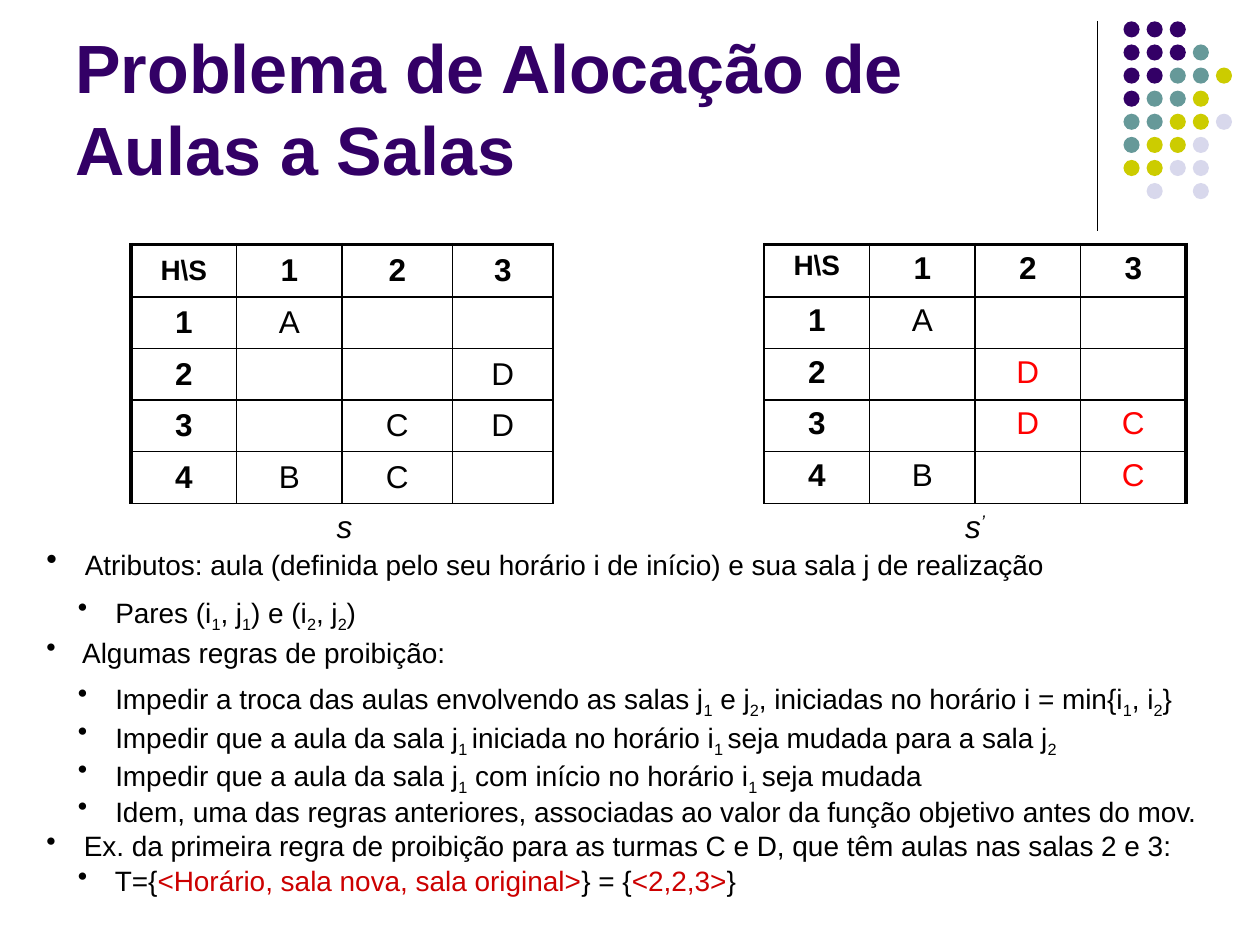
from lxml.etree import SubElement
from pptx import Presentation
from pptx.dml.color import RGBColor
from pptx.enum.shapes import MSO_CONNECTOR as Line, MSO_SHAPE as Shape
from pptx.enum.text import MSO_ANCHOR as Anchor, PP_ALIGN as Align
from pptx.oxml.ns import qn
from pptx.util import Pt

BLACK = RGBColor(0x00, 0x00, 0x00)
PURPLE = RGBColor(0x33, 0x00, 0x66)
TEAL = RGBColor(0x66, 0x99, 0x99)
OLIVE = RGBColor(0xCC, 0xCC, 0x00)
LILAC = RGBColor(0xD8, 0xD8, 0xEC)
RED = RGBColor(0xFF, 0x00, 0x00)
DARK_RED = RGBColor(0xCC, 0x00, 0x00)

DOT_COLORS = {"P": PURPLE, "T": TEAL, "O": OLIVE, "L": LILAC}
DOT_ROWS = ["PPP", "PPPT", "PPTTO", "PTTO", "TTOOL", "TOOL", "OOLL", " L L"]
BEFORE = [["A", "", ""], ["", "", "D"], ["", "C", "D"], ["B", "C", ""]]
AFTER = [["A", "", ""], ["", "D", ""], ["", "D", "C"], ["B", "", "C"]]
COLUMNS = [60.3, 60.3, 63.2, 57.4] + [60.3] * 6
ROWS = [30] + [29.5] * 5
GAP_COLUMNS = (4, 5)
CAPTION_ROW = 5
EDGES = {"L": (0, -1), "R": (0, 1), "T": (-1, 0), "B": (1, 0)}


def baseline(r, percent):
    r._r.get_or_add_rPr().set("baseline", str(percent * 1000))


def subscript(r):
    baseline(r, -25)


def dark_red(r):
    r.font.color.rgb = DARK_RED


def in_grid(row, col):
    return 0 <= row < CAPTION_ROW and 0 <= col < len(COLUMNS) and col not in GAP_COLUMNS


class Deck:
    font = "Arial"

    def __init__(self, prs):
        self.s = prs.slides.add_slide(prs.slide_layouts[6])

    def style(self, p, size, color=BLACK, bold=False, italic=False):
        f = p.font
        f.name, f.size, f.bold, f.italic = self.font, Pt(size), bold, italic
        f.color.rgb = color

    def line(self, x1, y1, x2, y2):
        sp = self.s.shapes.add_connector(Line.STRAIGHT, Pt(x1), Pt(y1), Pt(x2), Pt(y2))
        sp.line.color.rgb = BLACK
        sp.line.width = Pt(0.75)
        SubElement(sp._element.spPr, qn("a:effectLst"))

    def dot(self, x, y, d, color):
        sp = self.s.shapes.add_shape(Shape.OVAL, Pt(x), Pt(y), Pt(d), Pt(d))
        sp.shadow.inherit = False
        sp.fill.solid()
        sp.fill.fore_color.rgb = color
        sp.line.fill.background()

    def text_box(self, x, y, w, h, anchor=Anchor.TOP):
        tf = self.s.shapes.add_textbox(Pt(x), Pt(y), Pt(w), Pt(h)).text_frame
        tf.word_wrap = True
        tf.vertical_anchor = anchor
        return tf

    def title(self, text, x, y, w, h):
        p = self.text_box(x, y, w, h, Anchor.BOTTOM).paragraphs[0]
        p.text = text
        self.style(p, 39, PURPLE, bold=True)

    def table(self, x, y):
        frame = self.s.shapes.add_table(len(ROWS), len(COLUMNS), Pt(x), Pt(y),
                                        Pt(sum(COLUMNS)), Pt(sum(ROWS)))
        table = frame.table
        table.first_row = table.horz_banding = False
        for col, width in zip(table.columns, COLUMNS):
            col.width = Pt(width)
        for row, height in zip(table.rows, ROWS):
            row.height = Pt(height)
        for row in range(len(ROWS)):
            for col in range(len(COLUMNS)):
                cell = table.cell(row, col)
                self.borders(cell, row, col)
                cell.fill.background()
                self.style(cell.text_frame.paragraphs[0], 18)
        return table

    def borders(self, cell, row, col):
        tc_pr = cell._tc.get_or_add_tcPr()
        for side, (dr, dc) in EDGES.items():
            heavy = (side, row) == ("T", 0) or (side, col) in (("L", 0), ("R", len(COLUMNS) - 1))
            ln = SubElement(tc_pr, qn(f"a:ln{side}"), w=str(Pt(2.25 if heavy else 1)))
            if in_grid(row, col) or in_grid(row + dr, col + dc):
                SubElement(SubElement(ln, qn("a:solidFill")), qn("a:srgbClr"), val=str(BLACK))
            else:
                SubElement(ln, qn("a:noFill"))

    def cell(self, cell, text, anchor, size=18, **look):
        cell.vertical_anchor = anchor
        p = cell.text_frame.paragraphs[0]
        p.text = text
        p.alignment = Align.CENTER
        self.style(p, size, **look)
        return p

    def schedule(self, table, first, values, anchor, changed=()):
        for i, head in enumerate(["H\\S", "1", "2", "3"]):
            self.cell(table.cell(0, first + i), head, anchor, 18 if i else 16, bold=True)
        for row, entries in enumerate(values, 1):
            self.cell(table.cell(row, first), str(row), anchor, bold=True)
            for col, text in enumerate(entries, first + 1):
                if text:
                    self.cell(table.cell(row, col), text, anchor,
                              color=RED if text in changed else BLACK)
        caption = table.cell(CAPTION_ROW, first + 1)
        caption.merge(table.cell(CAPTION_ROW, first + 2))
        return self.cell(caption, "s", Anchor.TOP, italic=True)

    def bullet(self, p, level, spacing, before, text, mark=subscript):
        self.style(p, 16)
        p.level = level
        p.line_spacing = spacing
        p.space_before = Pt(before)
        p_pr = p._p.get_or_add_pPr()
        p_pr.set("marL", str(Pt(35 if level else 17)))
        p_pr.set("indent", str(Pt(-17)))
        bu = p_pr.makeelement(qn("a:buChar"), {"char": "•"})
        p_pr.find(qn("a:defRPr")).addprevious(bu)
        p.add_run().text = " "
        for i, part in enumerate(text.split("_")):
            if part:
                r = p.add_run()
                r.text = part
                if i % 2:
                    mark(r)


BULLETS = [
    (0, 0.9, 8, "Atributos: aula (definida pelo seu horário i de início) e sua sala j de realização"),
    (1, 0.9, 8, "Pares (i_1_, j_1_) e (i_2_, j_2_)"),
    (0, 0.7, 8, "Algumas regras de proibição:"),
    (1, 0.9, 8, "Impedir a troca das aulas envolvendo as salas j_1_ e j_2_, "
                "iniciadas no horário i = min{i_1_, i_2_}"),
    (1, 0.7, 6.4, "Impedir que a aula da sala j_1 _iniciada no horário i_1 _seja mudada para a sala j_2_"),
    (1, 0.7, 6.4, "Impedir que a aula da sala j_1_ com início no horário i_1 _seja mudada"),
    (1, 0.7, 6.4, "Idem, uma das regras anteriores, associadas ao valor da função objetivo antes do mov."),
    (0, 0.7, 6.4, "Ex. da primeira regra de proibição para as turmas C e D, que têm aulas nas salas 2 e 3:"),
    (1, 0.7, 6.4, "T={_<Horário, sala nova, sala original>_} = {_<2,2,3>_}", dark_red),
]


def main():
    prs = Presentation()
    prs.slide_width, prs.slide_height = Pt(720), Pt(540)
    deck = Deck(prs)

    deck.line(627, 12, 627, 132)
    for row, dots in enumerate(DOT_ROWS):
        for col, key in enumerate(dots):
            if key in DOT_COLORS:
                deck.dot(642 + 13.2 * col, 12.2 + 13.2 * row, 9.2, DOT_COLORS[key])
    deck.title("Problema de Alocação de Aulas a Salas", 36, 9.4, 594, 102.2)

    table = deck.table(74.9, 139.7)
    deck.schedule(table, 0, BEFORE, Anchor.MIDDLE)
    p = deck.schedule(table, 6, AFTER, Anchor.TOP, changed="CD")
    r = p.add_run()
    r.text = "’"
    baseline(r, 30)

    tf = deck.text_box(19.4, 309.6, 686.2, 211.7)
    for i, item in enumerate(BULLETS):
        deck.bullet(tf.add_paragraph() if i else tf.paragraphs[0], *item)
    tf.paragraphs[0].runs[0].font.size = Pt(18)

    prs.save("out.pptx")


if __name__ == "__main__":
    main()
